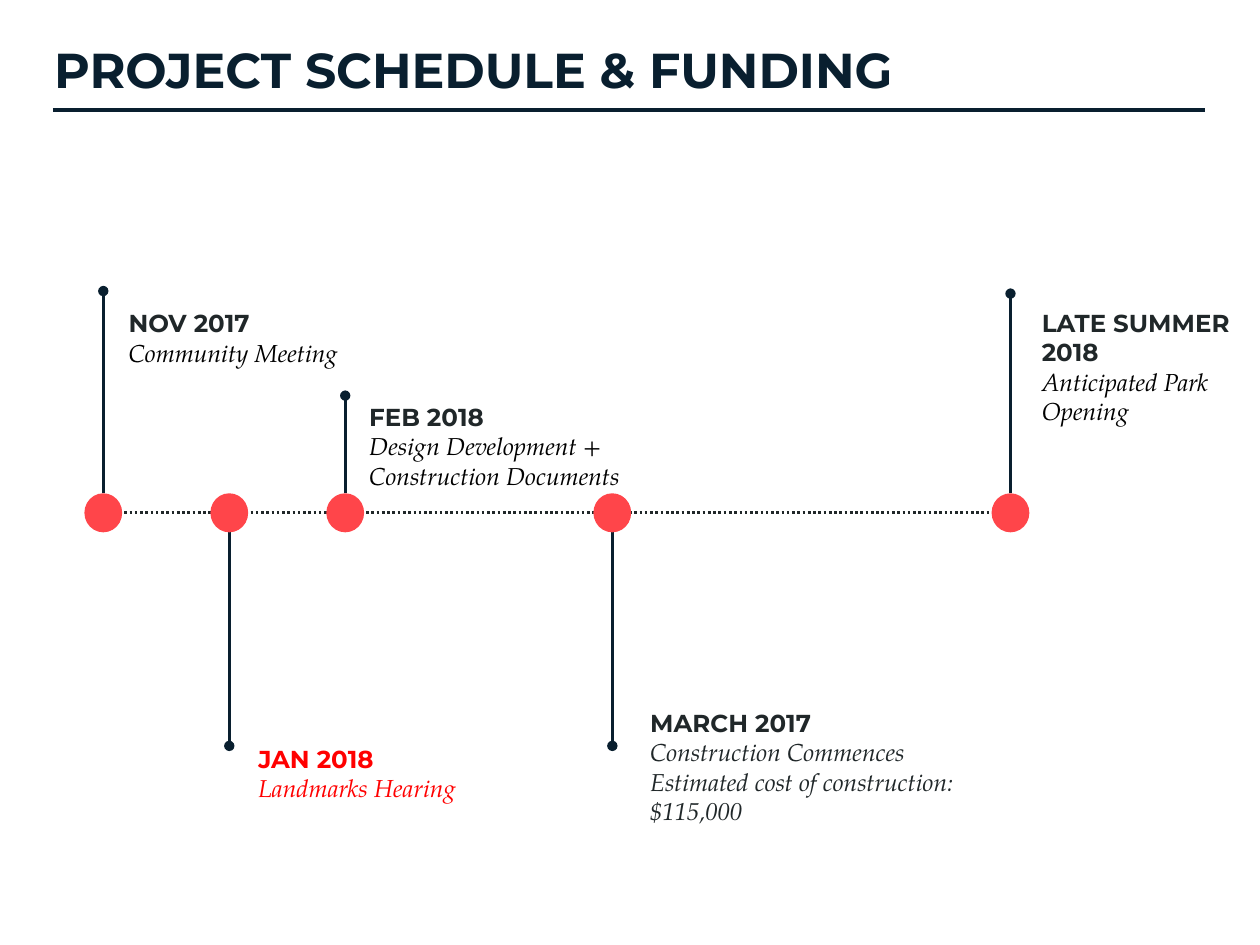
"""Build the project schedule and funding timeline slide."""
from dataclasses import dataclass
from itertools import zip_longest

from lxml.etree import SubElement
from pptx import Presentation
from pptx.dml.color import RGBColor
from pptx.enum.dml import MSO_LINE
from pptx.enum.shapes import MSO_CONNECTOR, MSO_SHAPE
from pptx.enum.text import MSO_ANCHOR, MSO_AUTO_SIZE, PP_ALIGN
from pptx.oxml.ns import qn
from pptx.shapes.autoshape import Shape
from pptx.shapes.connector import Connector
from pptx.slide import Slide
from pptx.text.text import TextFrame
from pptx.util import Inches, Pt

NAVY = RGBColor(0x09, 0x1F, 0x2F)
CHARCOAL = RGBColor(0x20, 0x27, 0x29)
CORAL = RGBColor(0xFF, 0x45, 0x4A)
RED = RGBColor(0xFF, 0x00, 0x00)
BLACK = RGBColor(0x00, 0x00, 0x00)

HEADING_FONT = "Montserrat"
DETAIL_FONT = "TeX Gyre Pagella"

WIDTH, HEIGHT = Inches(10), Inches(7.5)
COLUMN, ROW = WIDTH / 100, HEIGHT / 75
INSET = COLUMN
AXIS_ROW = 40.7
DOT_COLUMNS, DOT_ROWS = 3, 3.1


@dataclass(frozen=True)
class Area:
    """A rectangle in grid columns and rows."""

    left: float
    top: float
    columns: float
    rows: float


@dataclass(frozen=True)
class Milestone:
    """A dated stop on the timeline with its spoke and label."""

    date: str
    details: tuple[str, ...]
    column: float
    spoke_end: float
    label: Area
    date_color: RGBColor = CHARCOAL
    detail_color: RGBColor = BLACK
    lift: float = 0


MILESTONES = (
    Milestone("NOV 2017", ("Community Meeting",), 8.2, 23.1, Area(9.2, 24.2, 29.1, 5.2)),
    Milestone("JAN 2018", ("Landmarks Hearing",), 18.2, 59.2, Area(19.5, 59.2, 29.1, 4.3),
              RED, RED),
    Milestone("FEB 2018", ("Design Development +", "Construction Documents"), 27.4, 31.4,
              Area(28.3, 33.1, 29.1, 4.6)),
    Milestone("MARCH 2017",
              ("Construction Commences", "Estimated cost of construction:", "$115,000"),
              48.6, 59.2, Area(50.6, 58.3, 29.1, 7.5), detail_color=CHARCOAL, lift=2.4),
    Milestone("LATE SUMMER 2018", ("Anticipated Park Opening",), 80.2, 23.3,
              Area(81.7, 24.5, 17.6, 9.2)),
)


def box(area: Area) -> tuple[int, int, int, int]:
    """Convert a grid area to slide lengths."""
    return (round(area.left * COLUMN), round(area.top * ROW),
            round(area.columns * COLUMN), round(area.rows * ROW))


def place(shape: Shape, area: Area) -> None:
    """Move a shape to a grid area."""
    shape.left, shape.top, shape.width, shape.height = box(area)


def prepare(frame: TextFrame, lift: float = 0) -> None:
    """Set wrapping, anchor and insets, raising the text by extra rows below."""
    frame.word_wrap = True
    frame.auto_size = MSO_AUTO_SIZE.NONE
    frame.vertical_anchor = MSO_ANCHOR.MIDDLE
    frame.margin_left = frame.margin_right = frame.margin_top = round(INSET)
    frame.margin_bottom = round(INSET + lift * ROW)


def write(frame: TextFrame, index: int, text: str, font: str, size: float,
          color: RGBColor, bold: bool) -> None:
    """Write one unbulleted line, in italics unless bold."""
    paragraph = frame.add_paragraph() if index else frame.paragraphs[0]
    properties = paragraph._p.get_or_add_pPr()
    properties.set("marL", "0")
    properties.set("indent", "0")
    SubElement(properties, qn("a:buNone"))
    paragraph.alignment = PP_ALIGN.LEFT
    paragraph.space_before = Pt(0)
    run = paragraph.add_run()
    run.text = text
    run.font.name = font
    run.font.size = Pt(size)
    run.font.bold = bold
    run.font.italic = not bold
    run.font.color.rgb = color


def draw_line(slide: Slide, start: tuple[float, float], end: tuple[float, float],
              color: RGBColor, weight: float, dash: MSO_LINE | None = None,
              oval: bool = False) -> Connector:
    """Draw a straight line between two (column, row) points."""
    line = slide.shapes.add_connector(
        MSO_CONNECTOR.STRAIGHT, round(start[0] * COLUMN), round(start[1] * ROW),
        round(end[0] * COLUMN), round(end[1] * ROW))
    line.line.color.rgb = color
    line.line.width = Pt(weight)
    if dash is not None:
        line.line.dash_style = dash
    if oval:
        SubElement(line.line._get_or_add_ln(), qn("a:tailEnd"), type="oval")
    SubElement(line._element.spPr, qn("a:effectLst"))
    return line


def draw_marker(slide: Slide, milestone: Milestone) -> None:
    """Draw a milestone's spoke and its dot on the axis."""
    direction = 1 if milestone.spoke_end > AXIS_ROW else -1
    edge = AXIS_ROW + direction * DOT_ROWS / 2
    draw_line(slide, (milestone.column, edge), (milestone.column, milestone.spoke_end),
              NAVY, 1.5, oval=True)
    area = Area(milestone.column - DOT_COLUMNS / 2, AXIS_ROW - DOT_ROWS / 2,
                DOT_COLUMNS, DOT_ROWS)
    dot = slide.shapes.add_shape(MSO_SHAPE.OVAL, *box(area))
    dot.shadow.inherit = False
    dot.fill.solid()
    dot.fill.fore_color.rgb = CORAL
    dot.line.fill.background()


def write_label(label: Shape, milestone: Milestone) -> None:
    """Fill a label with the milestone's date and details."""
    place(label, milestone.label)
    frame = label.text_frame
    prepare(frame, milestone.lift)
    write(frame, 0, milestone.date, HEADING_FONT, 14, milestone.date_color, True)
    for index, detail in enumerate(milestone.details, start=1):
        write(frame, index, detail, DETAIL_FONT, 14, milestone.detail_color, False)


def main() -> None:
    """Build and save the slide."""
    presentation = Presentation()
    presentation.slide_width, presentation.slide_height = WIDTH, HEIGHT
    comparison = presentation.slide_layouts.get_by_name("Comparison")
    slide = presentation.slides.add_slide(comparison)

    title, *bodies = slide.placeholders
    place(title, Area(3.3, 2.3, 80.8, 6.4))
    prepare(title.text_frame)
    write(title.text_frame, 0, "PROJECT SCHEDULE & FUNDING", HEADING_FONT, 28, NAVY, True)
    draw_line(slide, (4.2, 8.7), (95.6, 8.7), NAVY, 2.25)

    draw_line(slide, (MILESTONES[0].column, AXIS_ROW), (81.1, AXIS_ROW),
              CHARCOAL, 1.5, MSO_LINE.ROUND_DOT)
    for milestone, body in zip_longest(MILESTONES, bodies):
        draw_marker(slide, milestone)
        write_label(body or slide.shapes.add_textbox(*box(milestone.label)), milestone)

    presentation.save("out.pptx")


if __name__ == "__main__":
    main()
